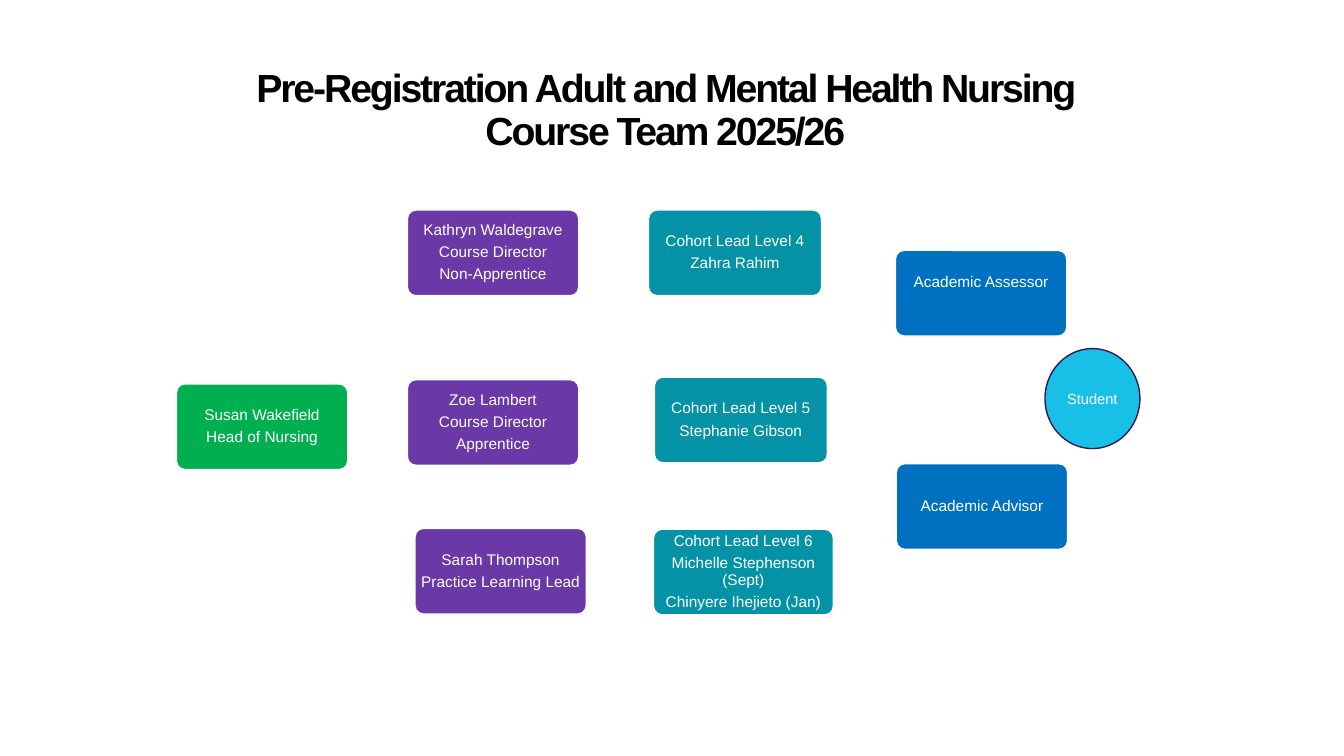
from dataclasses import dataclass

import pptx
import pptx.dml.color
import pptx.enum.shapes
import pptx.enum.text
import pptx.util

SHAPE = pptx.enum.shapes.MSO_SHAPE
COLUMNS, ROWS = 160, 90


@dataclass(frozen=True)
class Theme:
    font: str = "Arial"
    title_size: float = 28
    card_size: float = 11
    student_size: float = 10.5
    black: str = "000000"
    white: str = "FFFFFF"
    head: str = "00B050"
    director: str = "6B38A8"
    cohort: str = "0492A6"
    academic: str = "0070C0"
    student: str = "18C0E8"
    student_edge: str = "331A53"


def rgb(code):
    return pptx.dml.color.RGBColor.from_string(code)


class TeamPage:
    """Draws on one slide, with lengths in grid columns and rows."""

    def __init__(self, deck, theme):
        self.theme = theme
        self.column = deck.slide_width / COLUMNS
        self.row = deck.slide_height / ROWS
        self.page = deck.slides.add_slide(deck.slide_layouts[5])

    def place(self, left, top, width, height):
        return (round(left * self.column), round(top * self.row),
                round(width * self.column), round(height * self.row))

    def style(self, para, size, color, bold=False):
        para.alignment = pptx.enum.text.PP_ALIGN.CENTER
        para.font.name = self.theme.font
        para.font.size = pptx.util.Pt(size)
        para.font.bold = bold
        para.font.color.rgb = rgb(color)

    def title(self, text, *area):
        box = self.page.shapes.title
        box.left, box.top, box.width, box.height = self.place(*area)
        frame = box.text_frame
        frame.auto_size = pptx.enum.text.MSO_AUTO_SIZE.NONE
        frame.vertical_anchor = pptx.enum.text.MSO_ANCHOR.MIDDLE
        para = frame.paragraphs[0]
        span = para.add_run()
        span.text = text
        span.font.bold = True
        span.font._element.set("spc", "-150")
        para.line_spacing = 0.9
        self.style(para, self.theme.title_size, self.theme.black, bold=True)

    def shape(self, kind, area, fill, edge):
        box = self.page.shapes.add_shape(kind, *self.place(*area))
        box.shadow.inherit = False
        box.fill.solid()
        box.fill.fore_color.rgb = rgb(fill)
        box.line.color.rgb = rgb(edge)
        box.line.width = pptx.util.Pt(1)
        box.text_frame.word_wrap = True
        box.text_frame.vertical_anchor = pptx.enum.text.MSO_ANCHOR.MIDDLE
        return box

    def card(self, lines, fill, left, top, width=20.4, lift=0):
        """Add a rounded card; lift raises its text by that many rows."""
        box = self.shape(SHAPE.ROUNDED_RECTANGLE, (left, top, width, 10.2),
                         fill, self.theme.white)
        box.adjustments[0] = 0.1
        frame = box.text_frame
        frame.margin_left = frame.margin_right = pptx.util.Inches(0.03)
        frame.margin_top = pptx.util.Inches(0.03)
        frame.margin_bottom = frame.margin_top + round(2 * lift * self.row)
        frame.text = "\n".join(lines)
        for para in frame.paragraphs:
            para.line_spacing = 0.9
            para.space_after = pptx.util.Pt(3.85)
            self.style(para, self.theme.card_size, self.theme.white)

    def circle(self, text, *area):
        box = self.shape(SHAPE.OVAL, area, self.theme.student,
                         self.theme.student_edge)
        frame = box.text_frame
        frame.margin_left = frame.margin_right = pptx.util.Inches(0.07)
        frame.margin_top = frame.margin_bottom = pptx.util.Inches(0.04)
        frame.text = text
        self.style(frame.paragraphs[0], self.theme.student_size, self.theme.white)


def main():
    deck = pptx.Presentation()
    deck.slide_width = pptx.util.Inches(13.33)
    deck.slide_height = pptx.util.Inches(7.5)
    theme = Theme()
    team = TeamPage(deck, theme)

    team.title("Pre-Registration Adult and Mental Health Nursing Course Team 2025/26",
               27.5, 7.3, 103.4, 11.9)
    team.card(["Susan Wakefield", "Head of Nursing"], theme.head, 21, 45.7)

    directors = [
        (48.5, 25, ["Kathryn Waldegrave", "Course Director", "Non-Apprentice"]),
        (48.5, 45.2, ["Zoe Lambert", "Course Director", "Apprentice"]),
        (49.4, 62.9, ["Sarah Thompson", "Practice Learning Lead"]),
    ]
    for left, top, lines in directors:
        team.card(lines, theme.director, left, top)

    cohorts = [
        (77.2, 25, 20.6, ["Zahra Rahim"]),
        (77.9, 44.9, 20.6, ["Stephanie Gibson"]),
        (77.8, 63, 21.4, ["Michelle Stephenson (Sept)", "Chinyere Ihejieto (Jan)"]),
    ]
    for level, (left, top, width, leads) in enumerate(cohorts, start=4):
        team.card([f"Cohort Lead Level {level}", *leads], theme.cohort,
                  left, top, width)

    team.card(["Academic Assessor"], theme.academic, 106.6, 29.8, lift=1.3)
    team.card(["Academic Advisor"], theme.academic, 106.7, 55.2)
    team.circle("Student", 124.4, 41.5, 11.3, 11.9)

    deck.save("out.pptx")


if __name__ == "__main__":
    main()
